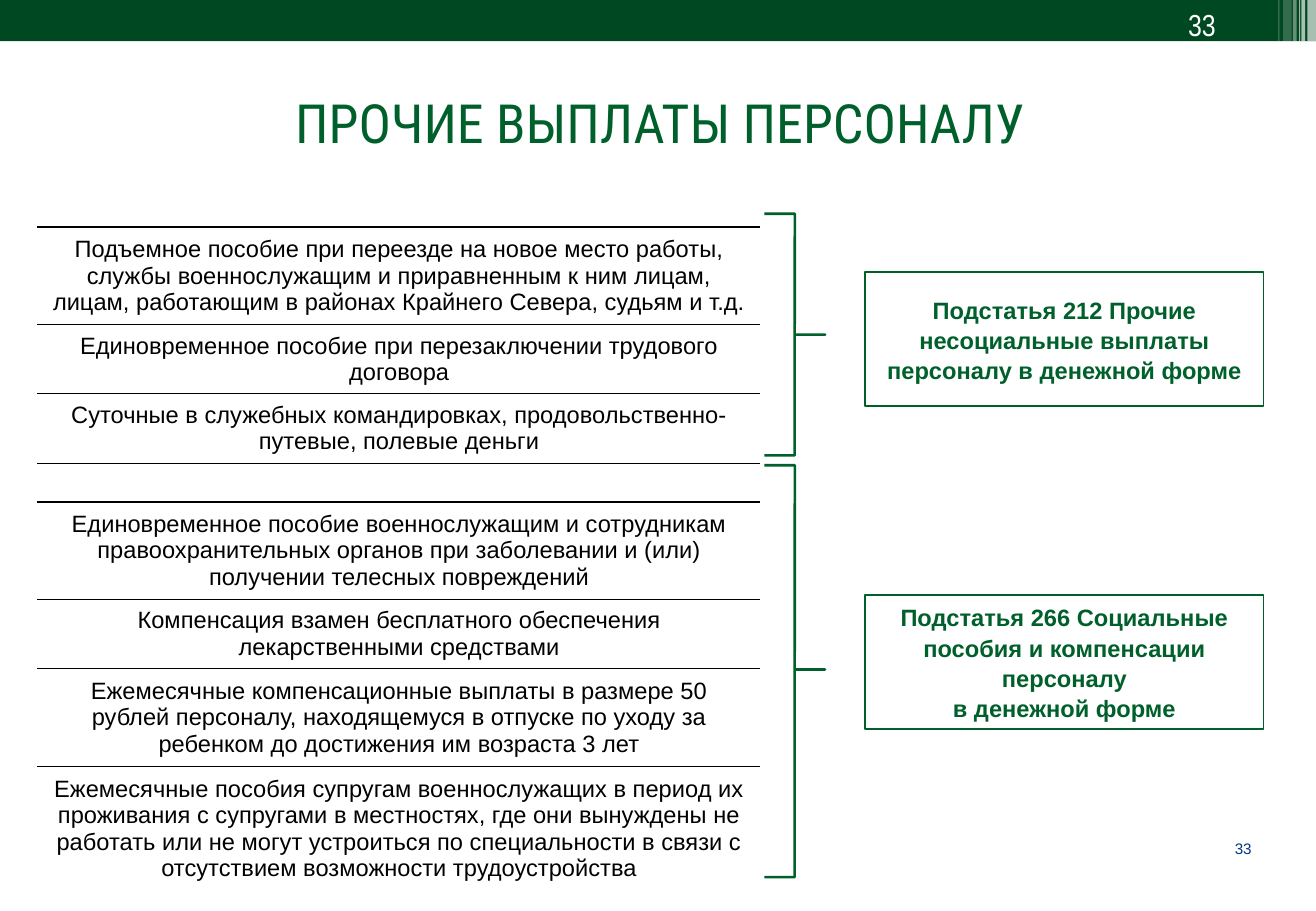
from dataclasses import dataclass

from lxml.etree import SubElement
from pptx import Presentation
from pptx.dml.color import RGBColor
from pptx.enum.shapes import MSO_SHAPE
from pptx.enum.text import MSO_ANCHOR, PP_ALIGN
from pptx.oxml import parse_xml
from pptx.oxml.ns import nsdecls, qn
from pptx.util import Inches, Pt


@dataclass(frozen=True)
class Theme:
    band: str = "004821"
    green: str = "00602B"
    blue: str = "00338D"
    black: str = "000000"
    white: str = "FFFFFF"
    title_font: str = "Roboto Condensed"
    number_font: str = "Arial Narrow"
    body_font: str = "Arial"
    title_size: float = 32
    number_size: float = 18
    body_size: float = 14
    footer_size: float = 9


T = Theme()
WIDTH, HEIGHT = Inches(10.83), Inches(7.5)
BAND_HEIGHT = 4.53
GAP_ROW = 4.27

# Stripes at the end of the band: left, width, opacity (all in percent)
STRIPES = [(97.14, 0.09, 30), (97.51, 0.65, 20), (98.25, 0.28, 40),
           (98.71, 0.09, 60), (98.89, 0.28, 65), (99.35, 0.65, 65)]

# Payments by group: number of lines, text
GROUPS = [
    [(3, "Подъемное пособие при переезде на новое место работы, службы "
         "военнослужащим и приравненным к ним лицам, лицам, работающим в "
         "районах Крайнего Севера, судьям и т.д."),
     (2, "Единовременное пособие при перезаключении трудового договора"),
     (2, "Суточные в служебных командировках, "
         "продовольственно-путевые, полевые деньги")],
    [(3, "Единовременное пособие военнослужащим и сотрудникам "
         "правоохранительных органов при заболевании и (или) получении "
         "телесных повреждений"),
     (2, "Компенсация взамен бесплатного обеспечения\n"
         "лекарственными средствами"),
     (3, "Ежемесячные компенсационные выплаты в размере 50 рублей персоналу, "
         "находящемуся в отпуске по уходу за ребенком до достижения им "
         "возраста 3 лет"),
     (4, "Ежемесячные пособия супругам военнослужащих в период их проживания "
         "с супругами в местностях, где они вынуждены не работать или не "
         "могут устроиться по специальности в связи с отсутствием "
         "возможности трудоустройства")],
]

# Budget items: brace top, brace height, brace tip, box top, text
ITEMS = [
    (23.47, 26.53, 0.5, 29.87,
     "Подстатья 212 Прочие несоциальные выплаты персоналу в денежной форме"),
    (51.07, 45.2, 0.496, 65.33,
     "Подстатья 266 Социальные пособия и компенсации персоналу\n"
     "в денежной форме"),
]


def rgb(value):
    return RGBColor.from_string(value)


def across(share):
    return round(WIDTH * share / 100)


def down(share):
    return round(HEIGHT * share / 100)


def area(left, top, width, height):
    """Turn percentages of the slide into a position and a size."""
    return across(left), down(top), across(width), down(height)


def write(tf, text, size, color, font=T.body_font, bold=False,
          align=PP_ALIGN.CENTER, spacing=None):
    tf.word_wrap = True
    tf.text = text
    for p in tf.paragraphs:
        p.alignment = align
        p.line_spacing = spacing
        for r in p.runs:
            r.font.size, r.font.name, r.font.bold = Pt(size), font, bold
            r.font.color.rgb = rgb(color)


def add_figure(s, kind, place, fill=None, line=None, weight=1, opacity=100):
    sp = s.shapes.add_shape(kind, *place)
    sp.shadow.inherit = False
    if fill:
        sp.fill.solid()
        sp.fill.fore_color.rgb = rgb(fill)
        if opacity < 100:
            color = sp.fill._xPr.find(qn("a:solidFill"))[0]
            SubElement(color, qn("a:alpha")).set("val", str(opacity * 1000))
    else:
        sp.fill.background()
    if line:
        sp.line.color.rgb = rgb(line)
        sp.line.width = Pt(weight)
    else:
        sp.line.fill.background()
    return sp


def add_label(s, place, text, size, color, font, align, inset=None):
    tf = s.shapes.add_textbox(*place).text_frame
    if inset is not None:
        tf.margin_left = tf.margin_right = inset
        tf.margin_top = tf.margin_bottom = inset
    write(tf, text, size, color, font, align=align)


def add_band(s):
    add_figure(s, MSO_SHAPE.RECTANGLE, area(0, 0, 100, BAND_HEIGHT), T.band)
    for left, width, opacity in STRIPES:
        add_figure(s, MSO_SHAPE.RECTANGLE, area(left, 0, width, BAND_HEIGHT),
                   T.white, opacity=opacity)


def add_title(s, text):
    sp = s.shapes.title
    sp.left, sp.top, sp.width, sp.height = area(0.18, 9.07, 100, 8.53)
    sp.text_frame.vertical_anchor = MSO_ANCHOR.MIDDLE
    write(sp.text_frame, text, T.title_size, T.green, T.title_font)


def set_border(cell, side, weight):
    line = parse_xml(
        f'<a:ln{side} {nsdecls("a")} w="{Pt(weight)}"><a:solidFill>'
        f'<a:srgbClr val="{T.black}"/></a:solidFill></a:ln{side}>')
    cell._tc.get_or_add_tcPr().insert(0, line)


def add_payments(s):
    # An empty row opens each group; the others grow with their lines
    rows = [row for group in GROUPS for row in [(0, "")] + group]
    heights = [1.4 + 3.1 * n if n else GAP_ROW for n, _ in rows]
    place = area(2.86, 20.67, 59.74, sum(heights))
    table = s.shapes.add_table(len(rows), 2, *place).table
    table.first_row = table.horz_banding = False
    table.columns[0].width, table.columns[1].width = across(54.94), across(4.8)

    for i, (lines, text) in enumerate(rows):
        table.rows[i].height = down(heights[i])
        for cell in table.rows[i].cells:
            cell.fill.background()
            cell.vertical_anchor = MSO_ANCHOR.MIDDLE
            if not lines:
                cell.margin_top = cell.margin_bottom = 0
        cell = table.cell(i, 0)
        if text:
            cell.margin_left = cell.margin_right = Inches(0.11)
            write(cell.text_frame, text, T.body_size, T.black)
        # Bottom border goes in first so that the top one precedes it
        if i < len(rows) - 1:
            set_border(cell, "B", 0.5 if lines else 1.5)
        if i > 0:
            set_border(cell, "T", 0.5 if rows[i - 1][0] else 1.5)


def add_item(s, brace_top, brace_height, tip, box_top, text):
    box = add_figure(s, MSO_SHAPE.RECTANGLE, area(65.74, box_top, 30.29, 14.67),
                     T.white, T.green)
    box.text_frame.vertical_anchor = MSO_ANCHOR.MIDDLE
    write(box.text_frame, text, T.body_size, T.green, bold=True, spacing=1.07)
    brace = add_figure(s, MSO_SHAPE.RIGHT_BRACE,
                       area(58.08, brace_top, 4.62, brace_height),
                       line=T.green, weight=1.5)
    brace.adjustments[0], brace.adjustments[1] = 0, tip


def main():
    prs = Presentation()
    prs.slide_width, prs.slide_height = WIDTH, HEIGHT
    s = prs.slides.add_slide(prs.slide_layouts[5])

    # Header, title and page numbers
    add_band(s)
    add_title(s, "ПРОЧИЕ ВЫПЛАТЫ ПЕРСОНАЛУ")
    add_label(s, area(89.38, 0, 8.31, 5.33), "33", T.number_size, T.white,
              T.number_font, PP_ALIGN.LEFT)
    add_label(s, area(91.14, 92.13, 3.97, 2.13), "33", T.footer_size, T.blue,
              T.body_font, PP_ALIGN.RIGHT, inset=0)

    # Payments on the left, budget items on the right
    add_payments(s)
    for item in ITEMS:
        add_item(s, *item)

    prs.save("out.pptx")


if __name__ == "__main__":
    main()
